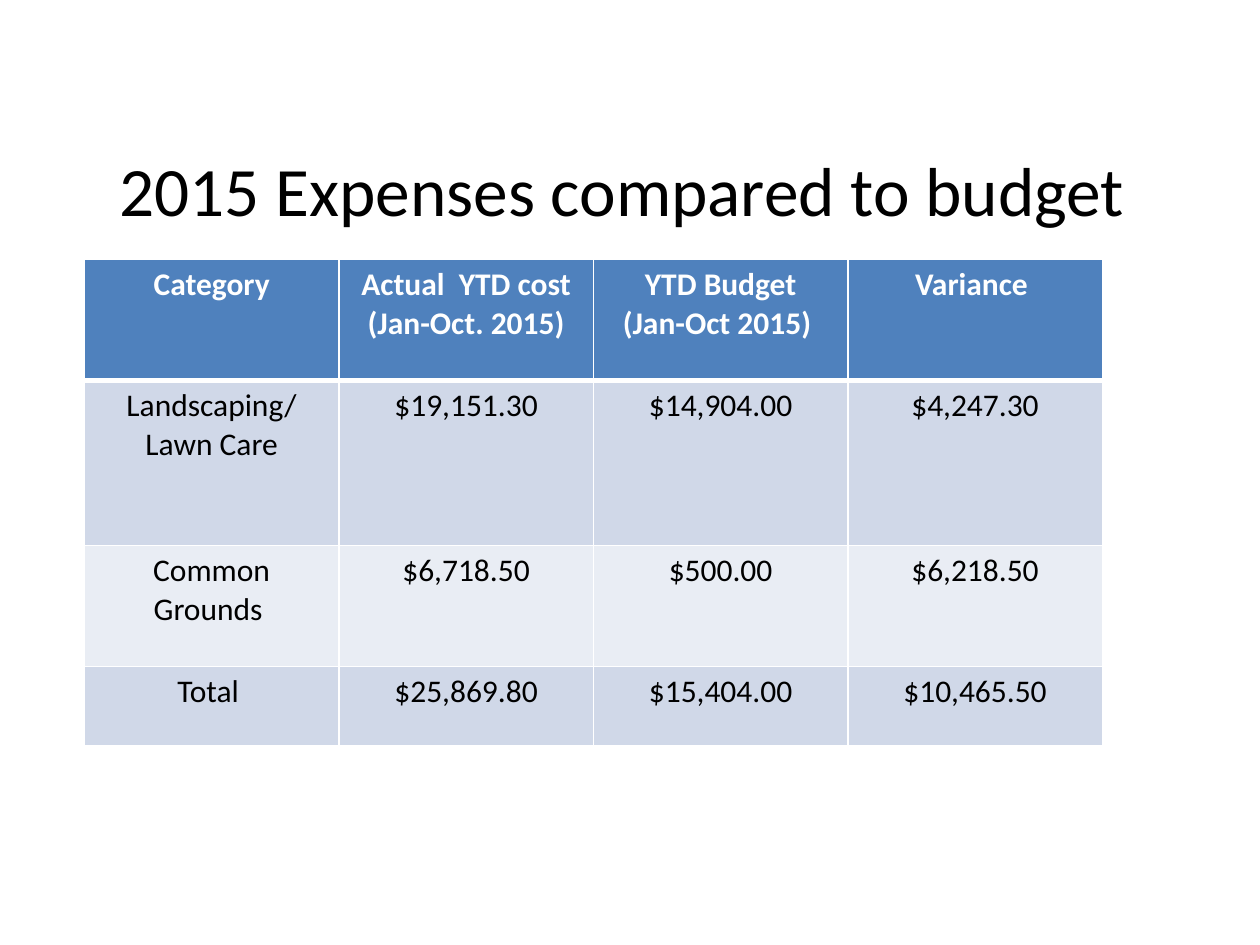
from typing import NamedTuple

from lxml import etree
from pptx import Presentation
from pptx.dml.color import RGBColor
from pptx.enum.text import MSO_ANCHOR, PP_ALIGN
from pptx.oxml.ns import qn
from pptx.util import Inches, Pt

CENTER = PP_ALIGN.CENTER
MIDDLE = MSO_ANCHOR.MIDDLE
FONT = "Calibri"
COLORS = {
    "paper": "FFFFFF",
    "ink": "000000",
    "head": "4F81BD",
    "odd": "D0D8E8",
    "even": "E9EDF4",
}
LEFT, TOP, COL = 0.67, 2.06, 2.02


class Row(NamedTuple):
    height: float
    cells: tuple[str, ...]


ROWS = (
    Row(0.96, ("Category", "Actual  YTD cost (Jan-Oct. 2015)",
               "YTD Budget\n(Jan-Oct 2015) ", "Variance ")),
    Row(1.31, ("Landscaping/\nLawn Care", "$19,151.30", "$14,904.00", "$4,247.30")),
    Row(0.96, ("Common Grounds ", "$6,718.50", "$500.00", "$6,218.50")),
    Row(0.63, ("Total ", "$25,869.80", "$15,404.00", "$10,465.50")),
)


def color(name: str) -> RGBColor:
    return RGBColor.from_string(COLORS[name])


def write(frame, text: str, size: float = 18, ink: str = "ink", bold: bool = False) -> None:
    frame.text = text
    for para in frame.paragraphs:
        para.alignment = CENTER
        for run in para.runs:
            font = run.font
            font.name, font.size, font.bold = FONT, Pt(size), bold
            font.color.rgb = color(ink)


def edge(cell, **widths: float) -> None:
    """Draw white cell borders, given as side=points in the order L, R, T, B."""
    props = cell._tc.get_or_add_tcPr()
    for spot, (side, width) in enumerate(widths.items()):
        line = etree.Element(qn(f"a:ln{side}"), w=str(Pt(width)))
        fill = etree.SubElement(line, qn("a:solidFill"))
        etree.SubElement(fill, qn("a:srgbClr"), val=COLORS["paper"])
        props.insert(spot, line)


def add_title(slide) -> None:
    title = slide.shapes.title
    title.left, title.top = Inches(0.75), Inches(0.83)
    title.width, title.height = Inches(8.5), Inches(1.33)
    write(title.text_frame, "2015 Expenses compared to budget ", size=39.6)
    title.text_frame.vertical_anchor = MIDDLE


def add_costs(slide) -> None:
    count = len(ROWS[0].cells)
    high = sum(row.height for row in ROWS)
    table = slide.shapes.add_table(
        len(ROWS), count, Inches(LEFT), Inches(TOP), Inches(COL * count), Inches(high)
    ).table
    for col in table.columns:
        col.width = Inches(COL)
    for r, row in enumerate(ROWS):
        table.rows[r].height = Inches(row.height)
        head = r == 0
        shade = "head" if head else "odd" if r % 2 else "even"
        for c, text in enumerate(row.cells):
            cell = table.cell(r, c)
            write(cell.text_frame, text, ink="paper" if head else "ink", bold=head)
            cell.fill.solid()
            cell.fill.fore_color.rgb = color(shade)
            edge(cell, L=1, R=1, T=3 if r == 1 else 1, B=3 if head else 1)


def main() -> None:
    deck = Presentation()
    deck.slide_width, deck.slide_height = Inches(10), Inches(7.5)
    slide = deck.slides.add_slide(deck.slide_layouts.get_by_name("Title Only"))
    add_title(slide)
    add_costs(slide)
    deck.save("out.pptx")


if __name__ == "__main__":
    main()
